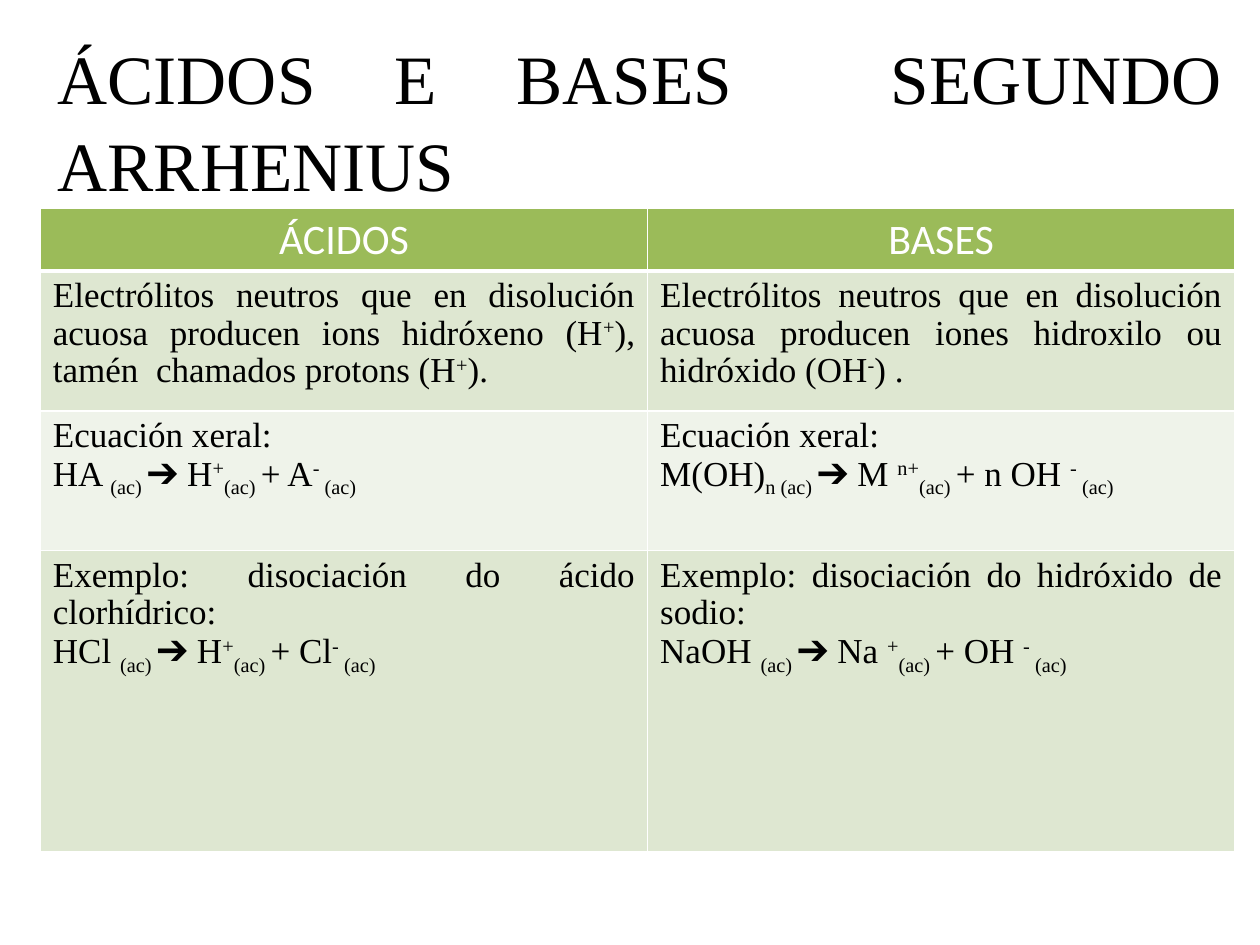
from lxml import etree
from pptx import Presentation
from pptx.dml.color import RGBColor
from pptx.enum.text import MSO_ANCHOR, PP_ALIGN
from pptx.oxml.ns import qn
from pptx.util import Inches, Pt

MID = MSO_ANCHOR.MIDDLE
MIX = PP_ALIGN.JUSTIFY
CEN = PP_ALIGN.CENTER

TITLE = "ÁCIDOS E BASES  SEGUNDO ARRHENIUS"
ROWS = [
    [["ÁCIDOS"], ["BASES"]],
    [
        ["Electrólitos neutros que en disolución acuosa producen ions "
         "hidróxeno (H|^+|), tamén  chamados protons (H|^+|)."],
        ["Electrólitos neutros que en disolución acuosa producen iones "
         "hidroxilo ou hidróxido (OH|^-|) ."],
    ],
    [
        ["Ecuación xeral:",
         "HA |_(ac) |➔ H|^+|_(ac) |+ A|^- |_(ac) "],
        ["Ecuación xeral:",
         "M(OH)|_n (ac) |➔ M |^n+|_(ac) |+ n OH |^- |_(ac) "],
    ],
    [
        ["Exemplo: disociación do ácido clorhídrico:",
         "HCl |_(ac) |➔ H|^+|_(ac) |+ Cl|^- |_(ac) "],
        ["Exemplo: disociación do hidróxido de sodio:",
         "NaOH |_(ac) |➔ Na |^+|_(ac) |+ OH |^- |_(ac) "],
    ],
]
WIDE = [4.82, 4.66]
HIGH = [0.5, 1.11, 1.11, 2.39]
FILLS = ["9BBB59", "DEE7D1", "EFF3EA", "DEE7D1"]
BASE = {"^": "30000", "_": "-25000"}

HEAD = {"name": "Calibri", "size": Pt(24)}
BODY = {"name": "Times New Roman", "size": Pt(20)}
TOP = {"name": "Times New Roman", "size": Pt(39.6)}


def color(code):
    return RGBColor.from_string(code)


def write(frame, lines, look, ink, **form):
    frame.word_wrap = True
    for i, line in enumerate(lines):
        para = frame.add_paragraph() if i else frame.paragraphs[0]
        for key, val in form.items():
            setattr(para, key, val)
        for part in line.split("|"):
            run = para.add_run()
            run.text = part.lstrip("^_")
            for key, val in look.items():
                setattr(run.font, key, val)
            run.font.color.rgb = color(ink)
            if part[0] in BASE:
                run.font._element.set("baseline", BASE[part[0]])


def edge(cell, side, width):
    line = etree.SubElement(cell._tc.get_or_add_tcPr(), qn("a:ln" + side))
    line.set("w", str(Pt(width)))
    fill = etree.SubElement(line, qn("a:solidFill"))
    etree.SubElement(fill, qn("a:srgbClr")).set("val", "FFFFFF")


deck = Presentation()
deck.slide_width, deck.slide_height = Inches(10), Inches(7.5)
slide = deck.slides.add_slide(deck.slide_layouts[6])

box = slide.shapes.add_textbox(*map(Inches, (0.36, 0.24, 9.44, 1.4)))
box.text_frame.vertical_anchor = MID
write(box.text_frame, [TITLE], TOP, "000000", alignment=MIX, line_spacing=1.04)

table = slide.shapes.add_table(
    len(ROWS), len(WIDE),
    *map(Inches, (0.32, 1.65, sum(WIDE), sum(HIGH)))).table
for col, width in zip(table.columns, WIDE):
    col.width = Inches(width)
for r, row in enumerate(ROWS):
    table.rows[r].height = Inches(HIGH[r])
    for c, lines in enumerate(row):
        cell = table.cell(r, c)
        for side in "LRTB":
            thick = (r, side) in ((0, "B"), (1, "T"))
            edge(cell, side, 3 if thick else 1)
        cell.fill.solid()
        cell.fill.fore_color.rgb = color(FILLS[r])
        if r:
            write(cell.text_frame, lines, BODY, "000000",
                  alignment=MIX, line_spacing=0.97)
        else:
            write(cell.text_frame, lines, HEAD | {"bold": False}, "FFFFFF",
                  alignment=CEN)

deck.save("out.pptx")
